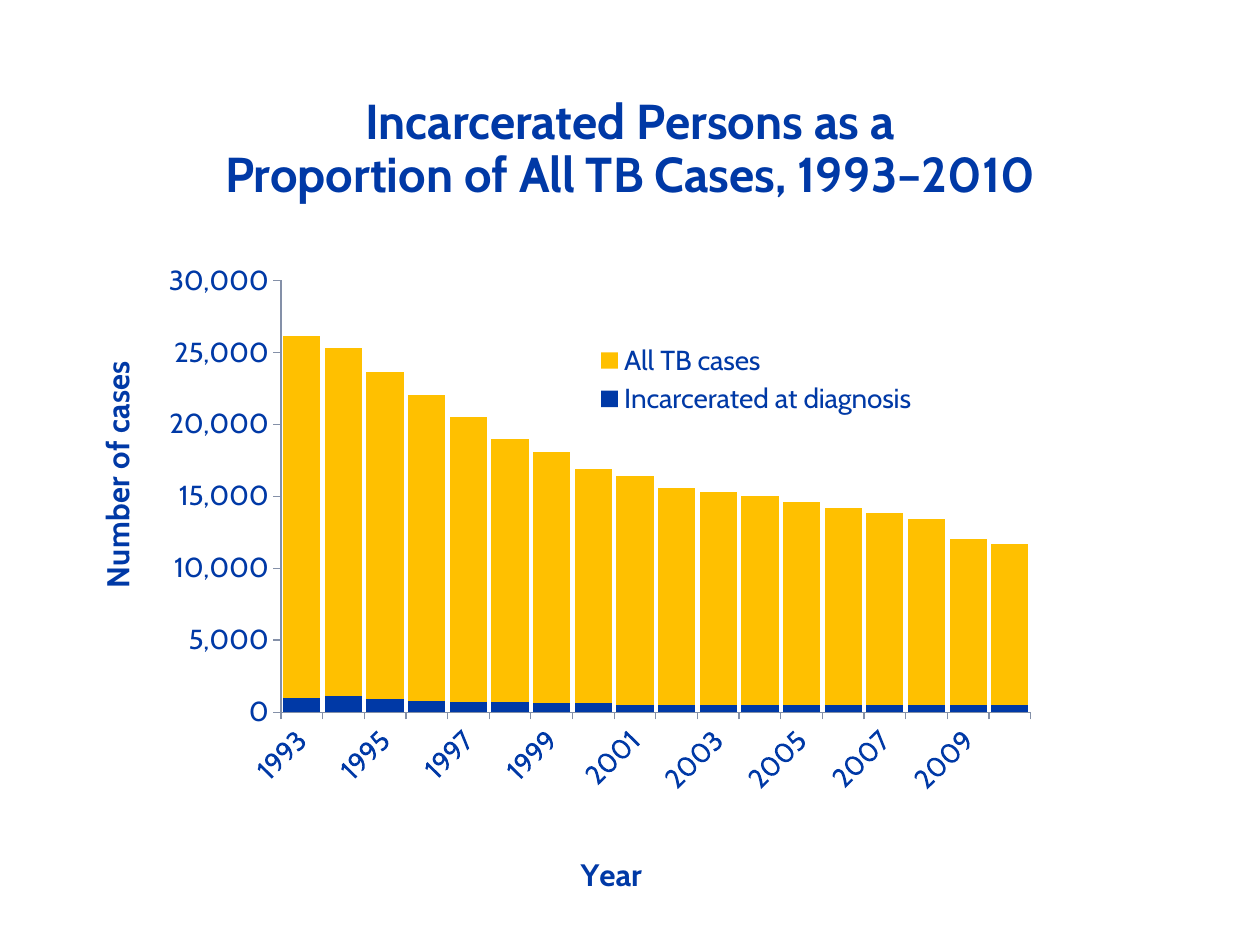
from lxml import etree
from pptx import Presentation
from pptx.chart.data import CategoryChartData
from pptx.dml.color import RGBColor
from pptx.enum import chart as charts, text
from pptx.oxml.ns import qn
from pptx.util import Cm, Pt

COLORS = {"blue": "0039A6", "gold": "FFC000", "axis": "8490A8"}
FONT = "Cabin"

TITLE = "Incarcerated Persons as a\vProportion of All TB Cases, 1993–2010"
YEARS = [str(year) for year in range(1993, 2011)]
SERIES = [
    ("Incarcerated at diagnosis", "blue",
     [1000, 1100, 900, 800, 700, 700, 600, 600, 500,
      500, 500, 500, 500, 500, 500, 500, 500, 500]),
    ("All TB cases", "gold",
     [25100, 24200, 22700, 21200, 19800, 18300, 17500, 16300, 15900,
      15100, 14800, 14500, 14100, 13700, 13300, 12900, 11500, 11200]),
]

# Shares of the chart's width and height
PLOT_AREA = {"x": 0.1635, "y": 0.0445, "w": 0.5626, "h": 0.676}
LEGEND_AREA = {"x": 0.395, "y": 0.135, "w": 0.25, "h": 0.13}
AXIS_TITLES = {
    "category": ("Year", {"x": 0.384, "y": 0.932}, 0),
    "value": ("Number of cases", {"x": 0.02, "y": 0.169}, -90),
}


def color(name):
    return RGBColor.from_string(COLORS[name])


def style_font(font, size, bold):
    values = {"name": FONT, "size": Pt(size), "bold": bold}
    for name, value in values.items():
        setattr(font, name, value)
    font.color.rgb = color("blue")


def place(element, area, after=None, inner=False):
    """Give a chart part a manual layout, following its child named after."""
    for old in element.findall(qn("c:layout")):
        element.remove(old)
    layout = etree.Element(qn("c:layout"))
    index = 0 if after is None else element.index(element.find(qn(after))) + 1
    element.insert(index, layout)
    manual = etree.SubElement(layout, qn("c:manualLayout"))
    settings = [("layoutTarget", "inner")] if inner else []
    settings += [("xMode", "edge"), ("yMode", "edge"), *area.items()]
    for tag, value in settings:
        etree.SubElement(manual, qn(f"c:{tag}")).set("val", str(value))


def rotate(body, degrees):
    properties = body.find(qn("a:bodyPr"))
    properties.set("rot", str(degrees * 60000))
    properties.set("vert", "horz")


def style_axis(axis, title, area, degrees):
    axis.has_major_gridlines = False
    axis.major_tick_mark = charts.XL_TICK_MARK.OUTSIDE
    axis.minor_tick_mark = charts.XL_TICK_MARK.NONE
    axis.format.line.color.rgb = color("axis")
    axis.format.line.width = Pt(0.75)
    style_font(axis.tick_labels.font, 16, False)
    frame = axis.axis_title.text_frame
    frame.text = title
    style_font(frame.paragraphs[0].runs[0].font, 18, True)
    rotate(frame._txBody, degrees)
    place(axis.axis_title._element, area, "c:tx")


def add_title(slide):
    box = slide.shapes.add_textbox(Cm(1.27), Cm(1.02), Cm(22.86), Cm(3.18))
    frame = box.text_frame
    frame.word_wrap = True
    frame.vertical_anchor = text.MSO_ANCHOR.BOTTOM
    frame.text = TITLE
    paragraph = frame.paragraphs[0]
    paragraph.alignment = text.PP_ALIGN.CENTER
    paragraph.line_spacing = Pt(30)
    for run in paragraph.runs:
        style_font(run.font, 28, True)


def add_cases_chart(slide):
    data = CategoryChartData(number_format="#,##0")
    data.categories = YEARS
    for name, _, values in SERIES:
        data.add_series(name, values)
    chart = slide.shapes.add_chart(
        charts.XL_CHART_TYPE.COLUMN_STACKED,
        Cm(1.27), Cm(5.08), Cm(26.87), Cm(13.13), data).chart
    style_font(chart.font, 18, False)
    chart.has_title = False

    plot = chart.plots[0]
    plot.gap_width, plot.overlap, plot.vary_by_categories = 12, 100, False
    for series, (_, fill, _) in zip(plot.series, SERIES):
        series.format.fill.solid()
        series.format.fill.fore_color.rgb = color(fill)
    place(chart._chartSpace.chart.plotArea, PLOT_AREA, inner=True)

    years, cases = chart.category_axis, chart.value_axis
    style_axis(years, *AXIS_TITLES["category"])
    style_axis(cases, *AXIS_TITLES["value"])
    cases.minimum_scale, cases.maximum_scale, cases.major_unit = 0, 30000, 5000
    cases.tick_labels.number_format = "#,##0"
    cases.tick_labels.number_format_is_linked = False
    rotate(years._element.find(qn("c:txPr")), -45)
    skip = etree.Element(qn("c:tickLblSkip"))
    skip.set("val", "2")
    years._element.find(qn("c:noMultiLvlLbl")).addprevious(skip)

    chart.has_legend = True
    legend = chart.legend
    legend.position = charts.XL_LEGEND_POSITION.RIGHT
    legend.include_in_layout = False
    style_font(legend.font, 16, False)
    place(legend._element, LEGEND_AREA, "c:legendPos")


def main():
    presentation = Presentation()
    presentation.slide_width, presentation.slide_height = Cm(25.4), Cm(19.05)
    slide = presentation.slides.add_slide(presentation.slide_layouts[6])
    add_title(slide)
    add_cases_chart(slide)
    presentation.save("out.pptx")


if __name__ == "__main__":
    main()
